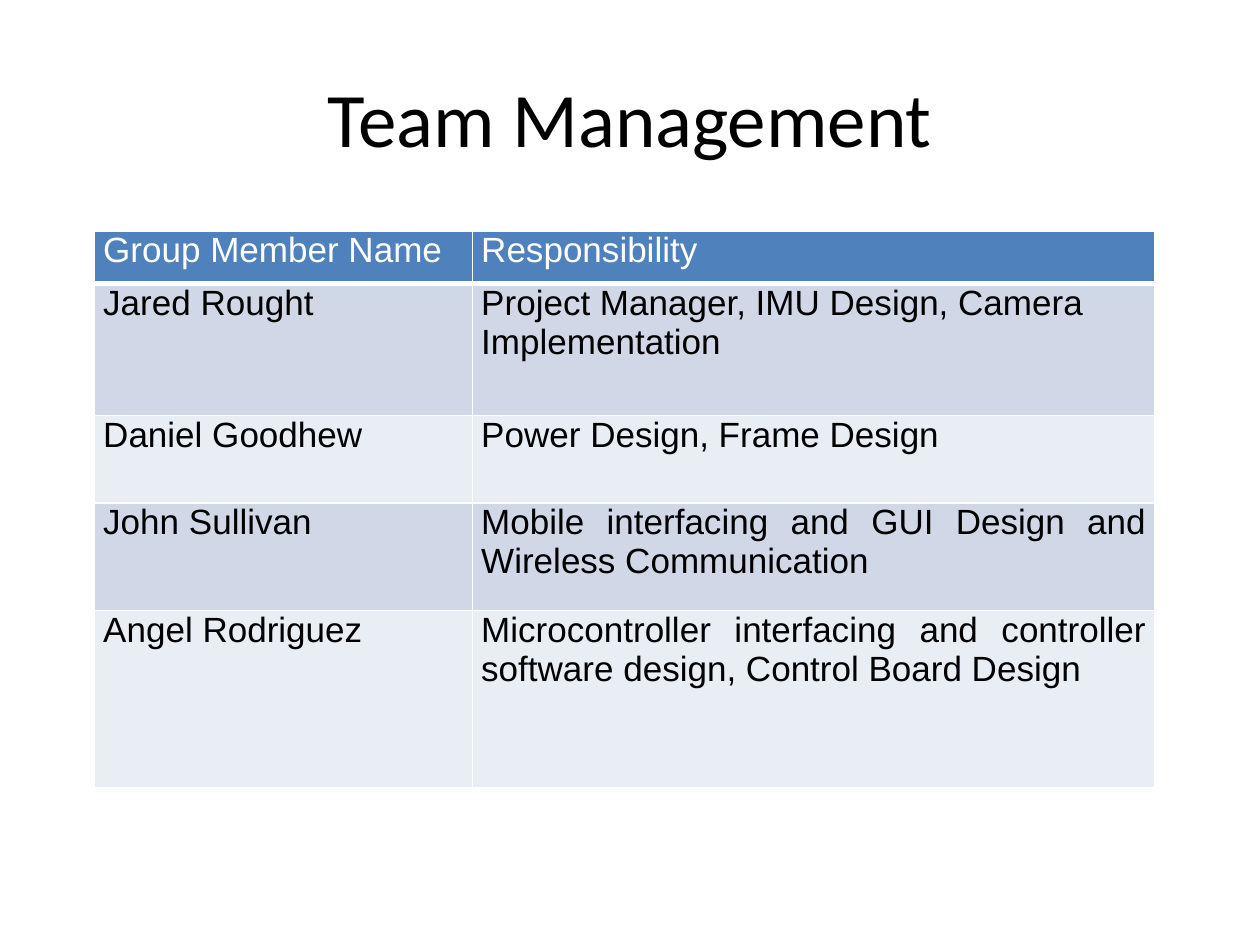
from lxml.etree import SubElement
from pptx import Presentation
from pptx.dml.color import RGBColor
from pptx.enum.text import MSO_ANCHOR, PP_ALIGN as Align
from pptx.oxml.ns import qn
from pptx.util import Pt

COLORS = {
    "white": "FFFFFF",
    "black": "000000",
    "header": "4F81BD",
    "band_dark": "D0D8E8",
    "band_light": "E9EDF4",
}
HEADINGS = ("Group Member Name", "Responsibility")
# Member, responsibility, alignment of the responsibility
MEMBERS = [
    ("Jared Rought", "Project Manager, IMU Design, Camera Implementation", Align.LEFT),
    ("Daniel Goodhew", "Power Design, Frame Design", Align.JUSTIFY),
    ("John Sullivan",
     "Mobile interfacing and GUI Design and Wireless Communication", Align.JUSTIFY),
    ("Angel Rodriguez",
     "Microcontroller interfacing and controller software design, Control Board Design",
     Align.JUSTIFY),
]
COLUMN_WIDTHS = (216, 390)
ROW_HEIGHTS = (30, 75.5, 50, 61.5, 101)


def write_text(frame, text, *, font, size, color, align):
    frame.word_wrap = True
    paragraph = frame.paragraphs[0]
    paragraph.alignment = align
    run = paragraph.add_run()
    run.text = text
    run.font.name = font
    run.font.size = Pt(size)
    run.font.bold = False
    run.font.color.rgb = RGBColor.from_string(COLORS[color])


def set_borders(cell, bottom=1):
    properties = cell._tc.get_or_add_tcPr()
    edges = (("lnL", 1), ("lnR", 1), ("lnT", 1), ("lnB", bottom))
    for position, (edge, width) in enumerate(edges):
        line = SubElement(properties, qn(f"a:{edge}"), w=str(Pt(width)))
        fill = SubElement(line, qn("a:solidFill"))
        SubElement(fill, qn("a:srgbClr"), val=COLORS["white"])
        properties.insert(position, line)  # borders come before the fill


def format_cell(cell, text, fill, color, align, bottom=1):
    cell.margin_left = cell.margin_right = Pt(5)
    cell.margin_top = cell.margin_bottom = Pt(0)
    cell.fill.solid()
    cell.fill.fore_color.rgb = RGBColor.from_string(COLORS[fill])
    set_borders(cell, bottom)
    write_text(cell.text_frame, text, font="Arial", size=20, color=color, align=align)


def add_title(slide, left, top, width, height):
    title = slide.shapes.add_textbox(Pt(left), Pt(top), Pt(width), Pt(height))
    title.text_frame.vertical_anchor = MSO_ANCHOR.MIDDLE
    write_text(title.text_frame, "Team Management", font="Calibri", size=44,
               color="black", align=Align.CENTER)


def add_team_table(slide, left, top, width, height):
    team = slide.shapes.add_table(len(MEMBERS) + 1, len(HEADINGS), Pt(left), Pt(top),
                                  Pt(width), Pt(height)).table
    for column, share in zip(team.columns, COLUMN_WIDTHS):
        column.width = Pt(width * share / sum(COLUMN_WIDTHS))
    for row, share in zip(team.rows, ROW_HEIGHTS):
        row.height = Pt(height * share / sum(ROW_HEIGHTS))

    # Header row
    for column, heading in enumerate(HEADINGS):
        format_cell(team.cell(0, column), heading, "header", "white",
                    Align.JUSTIFY, bottom=3)

    # Banded member rows
    for row, (member, duty, duty_align) in enumerate(MEMBERS, start=1):
        band = "band_dark" if row % 2 else "band_light"
        format_cell(team.cell(row, 0), member, band, "black", Align.JUSTIFY)
        format_cell(team.cell(row, 1), duty, band, "black", duty_align)


def main():
    presentation = Presentation()
    presentation.slide_width, presentation.slide_height = Pt(720), Pt(540)
    slide = presentation.slides.add_slide(presentation.slide_layouts[6])
    add_title(slide, 36, 21.6, 648, 90)
    add_team_table(slide, 54, 132, 606, 318)
    presentation.save("out.pptx")


if __name__ == "__main__":
    main()
